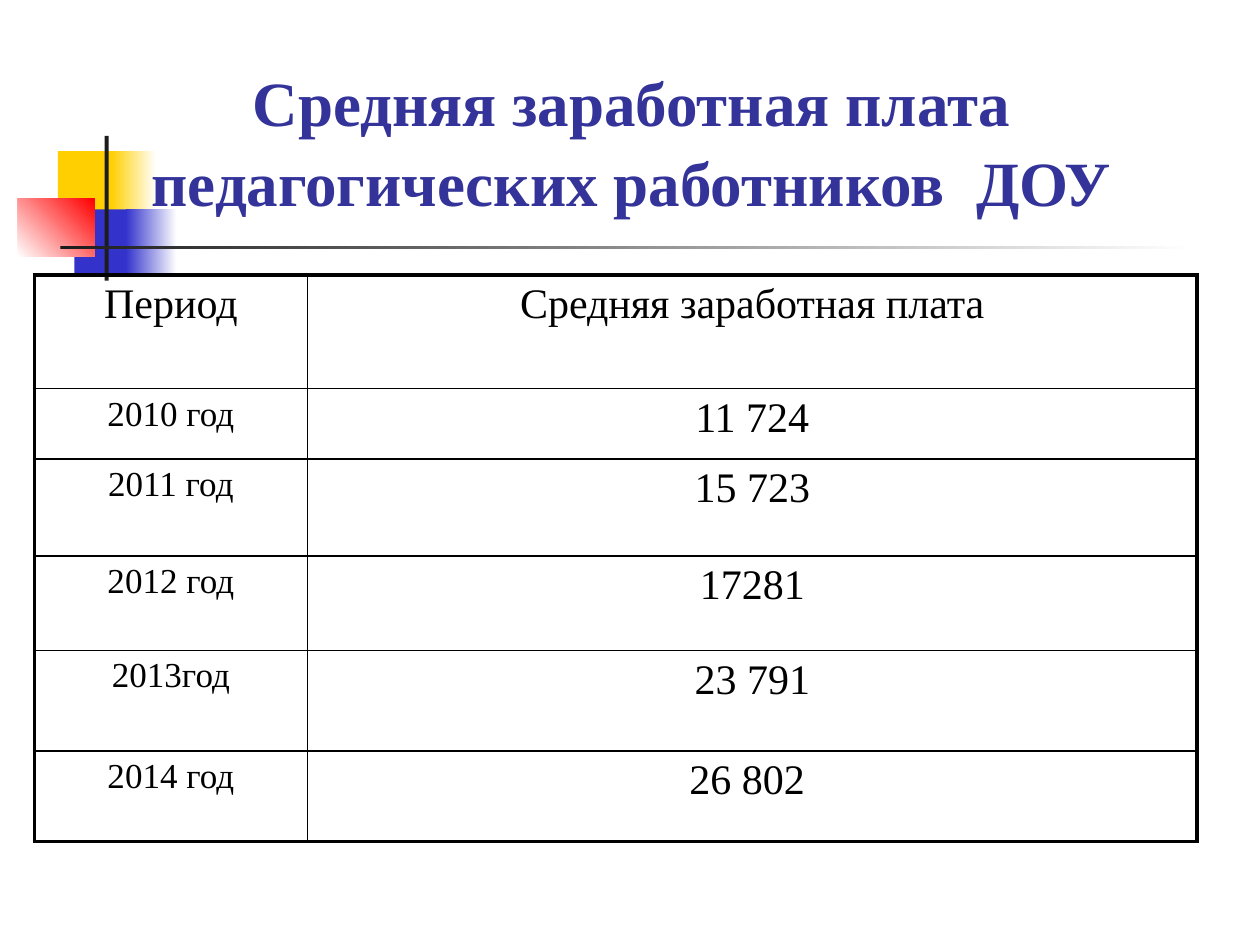
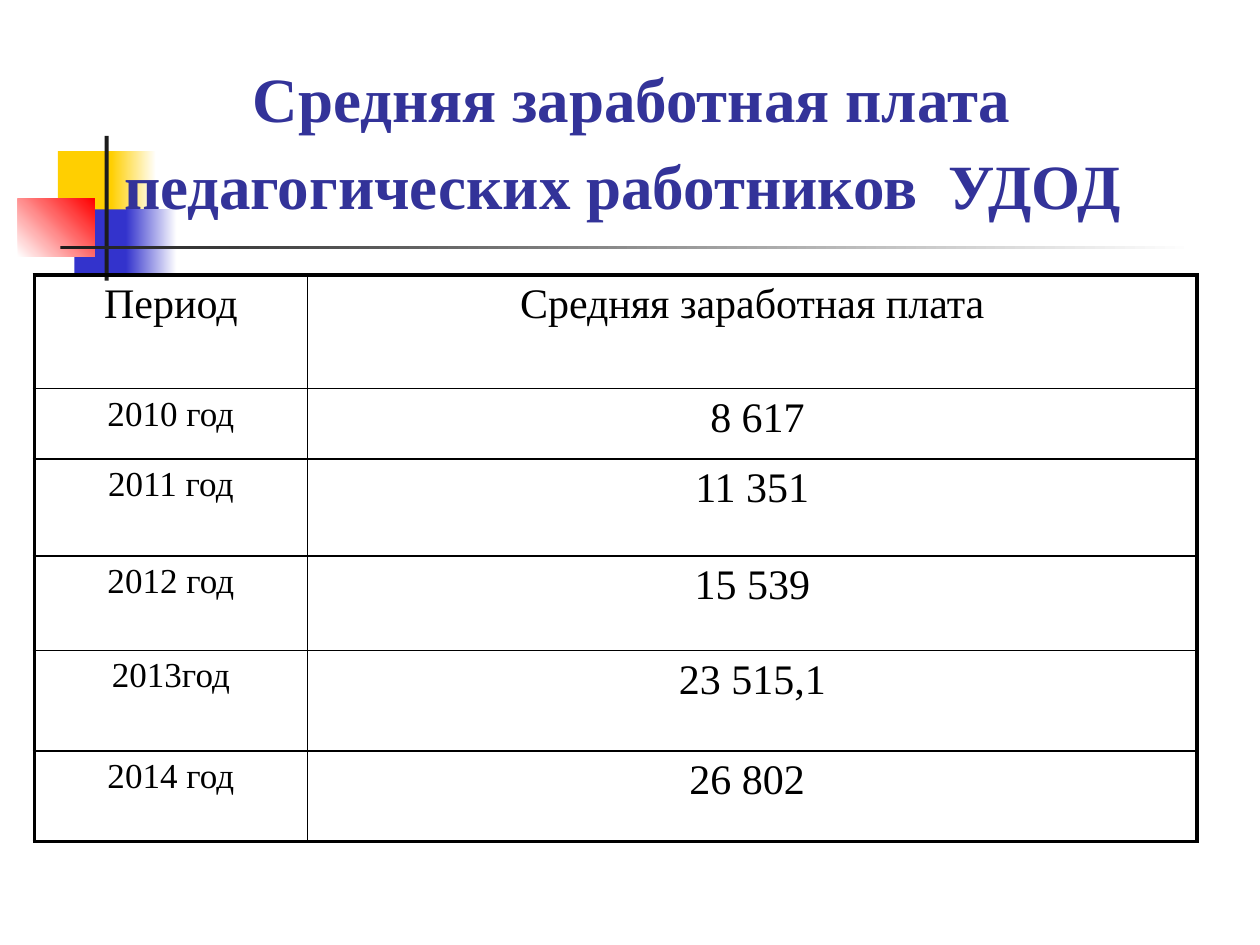
from lxml import etree
from pptx import Presentation
from pptx import util as u
from pptx.dml.color import RGBColor
from pptx.enum import shapes, text
from pptx.oxml import ns

# Shared look
YELLOW = RGBColor(0xFF, 0xCF, 0x01)
BLUE = RGBColor(0x33, 0x33, 0xCC)
RED = RGBColor(0xFF, 0x00, 0x00)
DARK = RGBColor(0x1C, 0x1C, 0x1C)
WHITE = RGBColor(0xFF, 0xFF, 0xFF)
BLACK = RGBColor(0x00, 0x00, 0x00)
TITLE_COLOR = RGBColor(0x33, 0x33, 0x99)
SERIF = "Times New Roman"

TITLE_FORMAT = {"name": SERIF, "size": u.Pt(36), "bold": True}
TITLE_TAIL_FORMAT = {"name": "Roboto", "size": u.Pt(40), "bold": False}
LARGE_FORMAT = {"name": SERIF, "size": u.Pt(24)}
YEAR_FORMAT = {"name": SERIF, "size": u.Pt(20)}

# Left, top, width, height in cm, then one colour or two colours and an angle
EMBLEM = [
    ((1.17, 3.05, 1.22, 1.32), (YELLOW,)),
    ((2.24, 3.05, 0.91, 1.32), (YELLOW, WHITE, 0)),
    ((1.5, 4.22, 1.17, 1.32), (BLUE,)),
    ((2.54, 4.22, 1.02, 1.32), (BLUE, WHITE, 0)),
    ((0.36, 4.01, 1.55, 1.17), (WHITE, RED, 45)),
    ((2.11, 2.74, 0.08, 2.92), (DARK,)),
    ((1.22, 4.95, 22.86, 0.08), (DARK, WHITE, 0)),
]

# Salary tables
COLUMN_WIDTHS = (5.51, 17.93)
ROW_HEIGHTS = (2.29, 1.42, 1.96, 1.9, 2.03, 1.83)
HEADER = ("Период", "Средняя заработная плата")
YEARS = ("2010 год", "2011 год", "2012 год", "2013год", "2014 год")
OUTER_LINE, INNER_LINE = 2.25, 1

# Title, run that closes the title, salaries by year
SALARY_SLIDES = [
    ("Средняя заработная плата педагогических работников  ДОУ", "",
     ("11 724", "15 723", "17281", "23 791", "26 802 ")),
    ("Средняя заработная плата педагогических работников  УДОД", " ",
     (" 8 617", "11 351", "15 539", "23 515,1", "26 802 ")),
]


def add_run(paragraph, words, formats, color):
    run = paragraph.add_run()
    run.text = words
    for attribute, value in formats.items():
        setattr(run.font, attribute, value)
    run.font.color.rgb = color


def add_block(slide, box, colors):
    block = slide.shapes.add_shape(shapes.MSO_SHAPE.RECTANGLE, *map(u.Cm, box))
    block.shadow.inherit = False
    block.line.fill.background()
    if len(colors) == 1:
        block.fill.solid()
        block.fill.fore_color.rgb = colors[0]
        return
    *ends, angle = colors
    block.fill.gradient()
    block.fill.gradient_angle = angle
    for stop, color in zip(block.fill.gradient_stops, ends):
        stop.color.rgb = color


def add_title(slide, title, tail):
    box = map(u.Cm, (1.3, 0.91, 22.86, 3.81))
    frame = slide.shapes.add_textbox(*box).text_frame
    frame.word_wrap = True
    frame.vertical_anchor = text.MSO_ANCHOR.MIDDLE
    line = frame.paragraphs[0]
    line.alignment = text.PP_ALIGN.CENTER
    line.line_spacing = 1.05
    add_run(line, title, TITLE_FORMAT, TITLE_COLOR)
    if tail:
        add_run(line, tail, TITLE_TAIL_FORMAT, TITLE_COLOR)


def add_borders(cell, widths):
    """Draw the cell's sides; widths are points keyed by L, R, T and B."""
    properties = cell._tc.get_or_add_tcPr()
    for side, width in widths.items():
        border = etree.SubElement(properties, ns.qn(f"a:ln{side}"),
                                  w=str(u.Pt(width)))
        fill = etree.SubElement(border, ns.qn("a:solidFill"))
        etree.SubElement(fill, ns.qn("a:srgbClr"), val=str(BLACK))


def add_salary_table(slide, salaries):
    rows = [HEADER, *zip(YEARS, salaries)]
    box = (0.69, 5.54, sum(COLUMN_WIDTHS), sum(ROW_HEIGHTS))
    table = slide.shapes.add_table(len(rows), len(HEADER),
                                   *map(u.Cm, box)).table
    table.first_row = table.horz_banding = False
    for column, width in zip(table.columns, COLUMN_WIDTHS):
        column.width = u.Cm(width)
    for row, height in zip(table.rows, ROW_HEIGHTS):
        row.height = u.Cm(height)

    for r, row in enumerate(rows):
        for c, words in enumerate(row):
            cell = table.cell(r, c)
            outer = {"L": c == 0, "R": c == len(row) - 1,
                     "T": r == 0, "B": r == len(rows) - 1}
            add_borders(cell, {side: OUTER_LINE if edge else INNER_LINE
                               for side, edge in outer.items()})
            cell.fill.background()
            paragraph = cell.text_frame.paragraphs[0]
            paragraph.alignment = text.PP_ALIGN.CENTER
            is_year = r > 0 and c == 0
            add_run(paragraph, words,
                    YEAR_FORMAT if is_year else LARGE_FORMAT, BLACK)


def main():
    deck = Presentation()
    deck.slide_width, deck.slide_height = u.Cm(25.4), u.Cm(19.05)
    blank = deck.slide_layouts[6]
    for title, tail, salaries in SALARY_SLIDES:
        slide = deck.slides.add_slide(blank)
        for box, colors in EMBLEM:
            add_block(slide, box, colors)
        add_title(slide, title, tail)
        add_salary_table(slide, salaries)
    deck.save("out.pptx")


if __name__ == "__main__":
    main()
